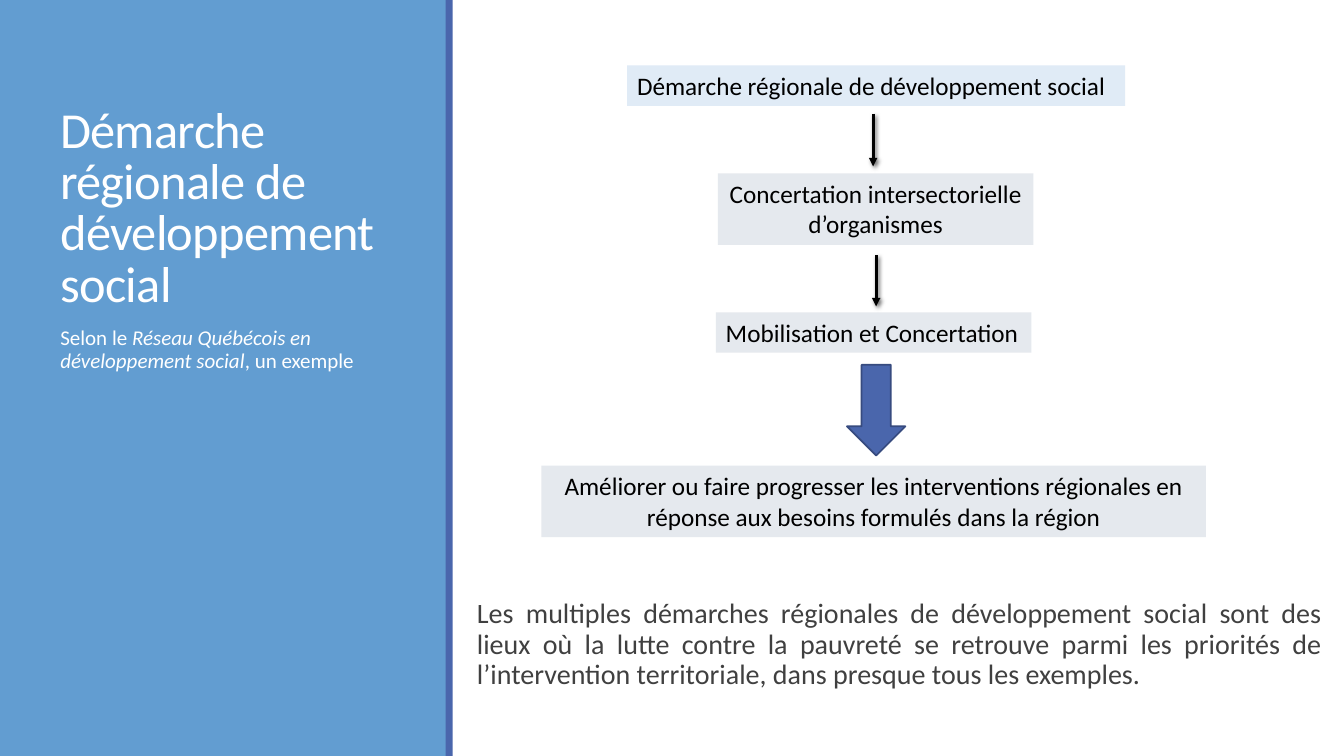
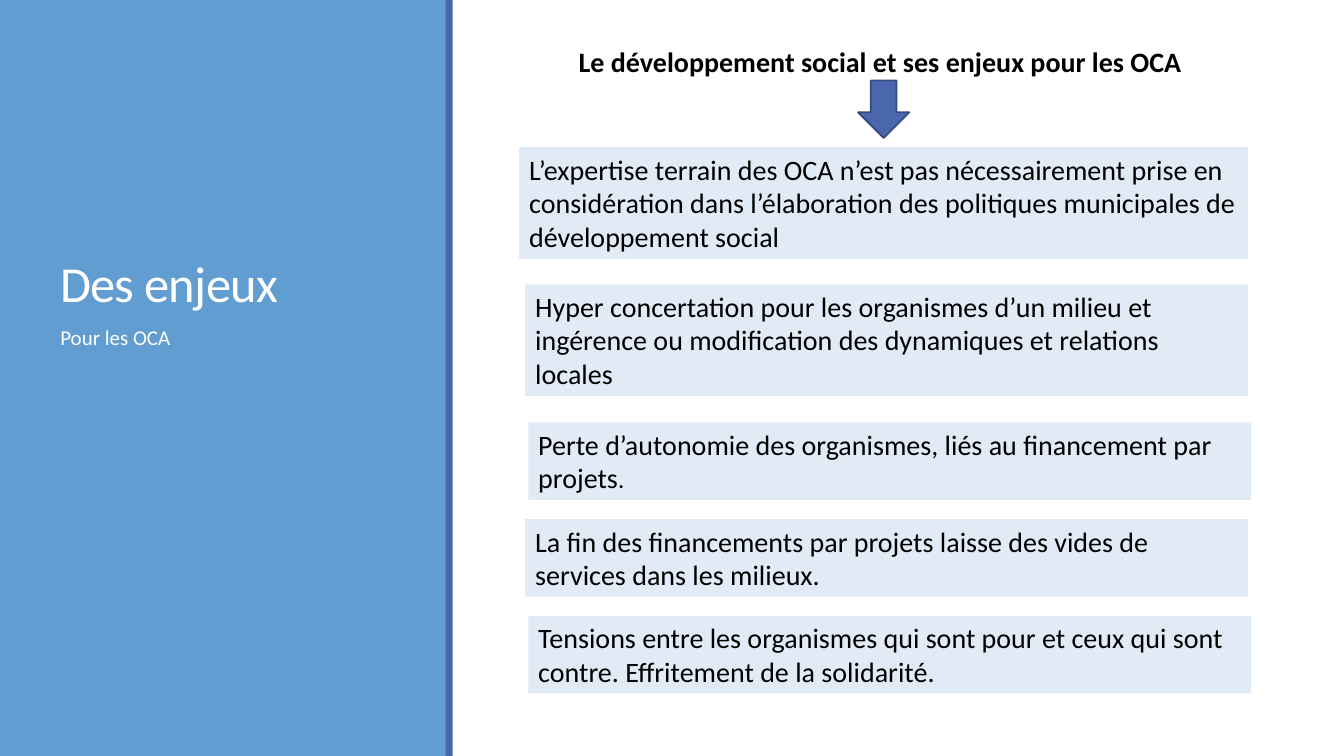
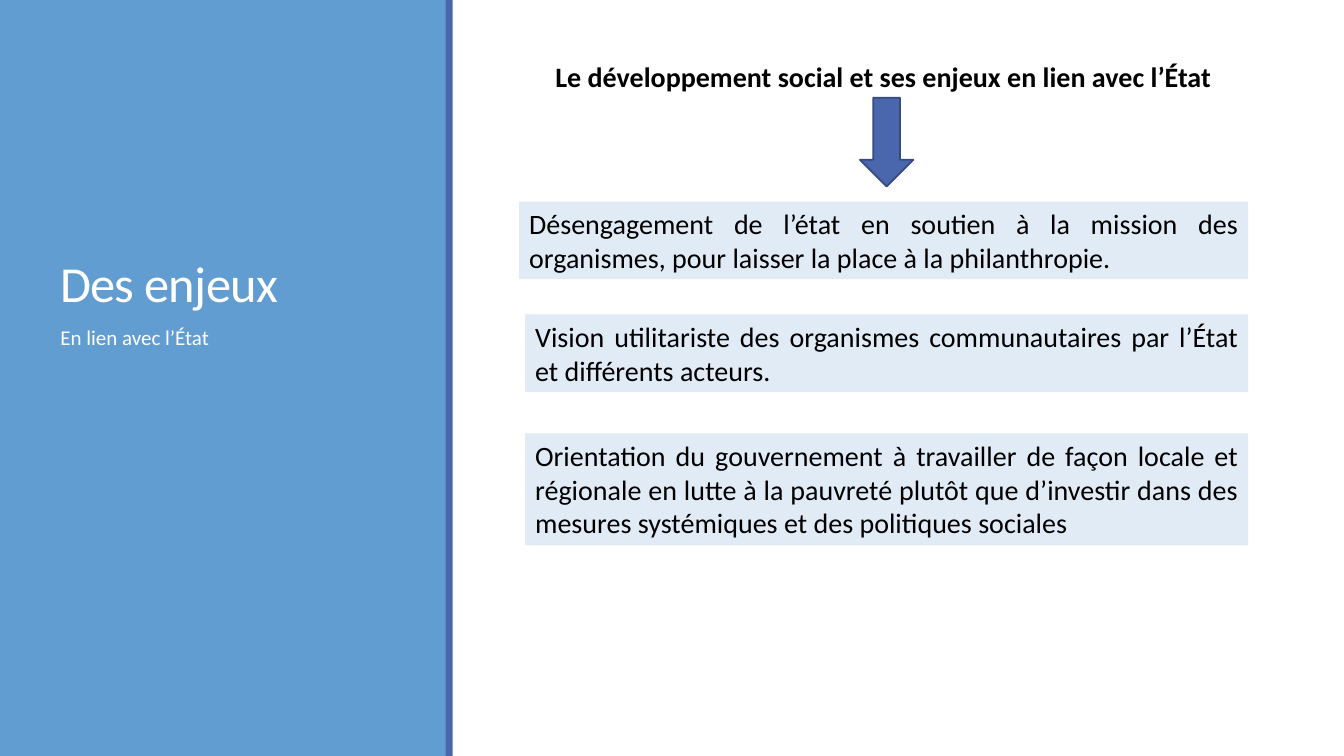
from lxml import etree
from pptx import Presentation
from pptx.dml.color import RGBColor
from pptx.enum import shapes, text
from pptx.oxml.ns import qn
from pptx.util import Emu, Pt

PX = 9144
FONT = "Calibri"
WHITE = RGBColor(0xFF, 0xFF, 0xFF)
BLACK = RGBColor(0x00, 0x00, 0x00)
DARK_GREY = RGBColor(0x40, 0x40, 0x40)
SKY = RGBColor(0x62, 0x9D, 0xD1)
INDIGO = RGBColor(0x4A, 0x66, 0xAC)
INDIGO_EDGE = RGBColor(0x37, 0x4B, 0x7F)
PALE_BLUE = RGBColor(0xE0, 0xEB, 0xF6)
PALE_GREY = RGBColor(0xE5, 0xE9, 0xEE)
LEFT, CENTER, JUSTIFY = text.PP_ALIGN.LEFT, text.PP_ALIGN.CENTER, text.PP_ALIGN.JUSTIFY


def px(*lengths):
    """Turn px lengths into EMU."""
    return [Emu(n * PX) for n in lengths]


def add_preset(slide, kind, at, fill, edge=None):
    """Add a flat preset shape with an optional outline."""
    sp = slide.shapes.add_shape(kind, *px(*at))
    sp.shadow.inherit = False
    sp.fill.solid()
    sp.fill.fore_color.rgb = fill
    if edge is None:
        sp.line.fill.background()
    else:
        sp.line.color.rgb = edge
        sp.line.width = Pt(1.25)


def add_text(slide, at, runs, size, color=BLACK, align=LEFT, bold=False):
    """Add a wrapped one-paragraph text box and return it with its paragraph."""
    sp = slide.shapes.add_textbox(*px(*at))
    tf = sp.text_frame
    tf.word_wrap = True
    p = tf.paragraphs[0]
    p.alignment = align
    p.font.name, p.font.size, p.font.bold = FONT, Pt(size), bold
    p.font.color.rgb = color
    for words in runs:
        p.add_run().text = words
    return sp, p


def add_box(slide, at, runs, size, fill=PALE_BLUE, align=LEFT):
    """Add a filled text box that fits its text and return its paragraph."""
    sp, p = add_text(slide, at, runs, size, align=align)
    sp.fill.solid()
    sp.fill.fore_color.rgb = fill
    sp.text_frame.auto_size = text.MSO_AUTO_SIZE.SHAPE_TO_FIT_TEXT
    return p


def space_body(p):
    """Apply the body spacing to a paragraph."""
    p.line_spacing, p.space_before, p.space_after = 0.9, Pt(12), Pt(2)


def add_block_arrow(slide, *at):
    """Add an outlined block arrow pointing down."""
    add_preset(slide, shapes.MSO_SHAPE.DOWN_ARROW, at, INDIGO, INDIGO_EDGE)


def add_thin_arrow(slide, x, top, bottom):
    """Add a thin shadowed arrow pointing down."""
    line = slide.shapes.add_connector(
        shapes.MSO_CONNECTOR.STRAIGHT, *px(x, top, x, bottom))
    line.line.color.rgb = BLACK
    line.line.width = Pt(2)
    ln = line.line._get_or_add_ln()
    etree.SubElement(ln, qn("a:tailEnd"), type="triangle")
    effects = etree.SubElement(line._element.spPr, qn("a:effectLst"))
    shadow = etree.SubElement(
        effects, qn("a:outerShdw"), blurRad=str(Pt(3)), dist=str(Pt(2)),
        dir="2700000", algn="ctr", rotWithShape="0")
    tint = etree.SubElement(shadow, qn("a:srgbClr"), val=str(BLACK))
    etree.SubElement(tint, qn("a:alpha"), val="60000")


def add_panel_slide(prs, title, subtitle):
    """Add a slide with the side panel; return it with the subtitle paragraph."""
    slide = prs.slides.add_slide(prs.slide_layouts[6])
    rect = shapes.MSO_SHAPE.RECTANGLE
    add_preset(slide, rect, (0, 0, 443, 750), SKY)
    add_preset(slide, rect, (442, 0, 7, 750), INDIGO)
    sp, p = add_text(slide, (50, 65, 350, 250), [title], 36, WHITE)
    sp.text_frame.vertical_anchor = text.MSO_ANCHOR.BOTTOM
    p.line_spacing = 0.85
    p.runs[0]._r.get_or_add_rPr().set("spc", "-50")
    p = add_text(slide, (50, 320, 350, 370), subtitle, 15, WHITE)[1]
    space_body(p)
    return slide, p


def build_approach(prs):
    """Build the flow of the regional approach."""
    name = "Démarche régionale de développement social"
    slide, p = add_panel_slide(prs, name, [
        "Selon le ", "Réseau Québécois en développement social", ", un exemple"])
    p.runs[1].font.italic = True
    steps = [
        ((622, 65, 494, 40), name, PALE_BLUE, LEFT),
        ((712, 172, 313, 71), "Concertation intersectorielle d’organismes", PALE_GREY, CENTER),
        ((710, 310, 313, 40), "Mobilisation et Concertation", PALE_GREY, LEFT),
        ((537, 462, 659, 71), "Améliorer ou faire progresser les interventions régionales en "
         "réponse aux besoins formulés dans la région", PALE_GREY, CENTER),
    ]
    for at, words, fill, align in steps:
        add_box(slide, at, [words], 18, fill, align)
    add_thin_arrow(slide, 866, 113, 165)
    add_thin_arrow(slide, 869, 253, 304)
    add_block_arrow(slide, 840, 362, 58, 90)
    sp, p = add_text(slide, (473, 590, 838, 199), [
        "Les multiples démarches régionales de développement social sont des lieux où la "
        "lutte contre la pauvreté se retrouve parmi les priorités de l’intervention "
        "territoriale, dans presque tous les exemples."], 20, DARK_GREY, JUSTIFY)
    sp.text_frame.margin_left = sp.text_frame.margin_right = 0
    space_body(p)


def build_issues(prs, subtitle, heading, heading_at, arrow_at, issues, align):
    """Build a slide listing issues; return the paragraphs of its boxes."""
    slide = add_panel_slide(prs, "Des enjeux", [subtitle])[0]
    add_text(slide, heading_at, [heading], 20, bold=True)
    add_block_arrow(slide, *arrow_at)
    return [add_box(slide, at, runs, 20, align=align) for at, *runs in issues]


def main():
    """Build and save the presentation."""
    prs = Presentation()
    prs.slide_width, prs.slide_height = px(1333, 750)
    build_approach(prs)
    boxes = build_issues(
        prs, "Pour les OCA", "Le développement social et ses enjeux pour les OCA",
        (564, 39, 625, 44), (851, 80, 51, 57), [
            ((515, 146, 723, 111), "L’expertise terrain des OCA n’est pas nécessairement prise "
             "en considération dans l’élaboration des politiques municipales de "
             "développement social"),
            ((521, 282, 717, 111), "Hyper concertation pour les organismes d’un milieu et "
             "ingérence ou modification des dynamiques et relations locales"),
            ((524, 419, 717, 77), "Perte d’autonomie des organismes, liés au financement par "
             "projets", "."),
            ((521, 515, 717, 77), "La fin des financements par projets laisse des vides de "
             "services dans les milieux."),
            ((524, 611, 717, 77), "Tensions entre les organismes qui sont pour et ceux qui "
             "sont contre. Effritement de la solidarité."),
        ], LEFT)
    boxes[2].runs[1].font.size = Pt(18)
    build_issues(
        prs, "En lien avec l’État", "Le développement social et ses enjeux en lien avec l’État",
        (541, 54, 676, 44), (853, 97, 53, 88), [
            ((515, 200, 723, 77), "Désengagement de l’état en soutien à la mission des "
             "organismes, pour laisser la place à la philanthropie."),
            ((521, 312, 717, 77), "Vision utilitariste des organismes communautaires par "
             "l’État et différents acteurs."),
            ((521, 430, 717, 111), "Orientation du gouvernement à travailler de façon locale et "
             "régionale en lutte à la pauvreté plutôt que d’investir dans des mesures "
             "systémiques et des politiques sociales"),
        ], JUSTIFY)
    prs.save("out.pptx")


if __name__ == "__main__":
    main()
